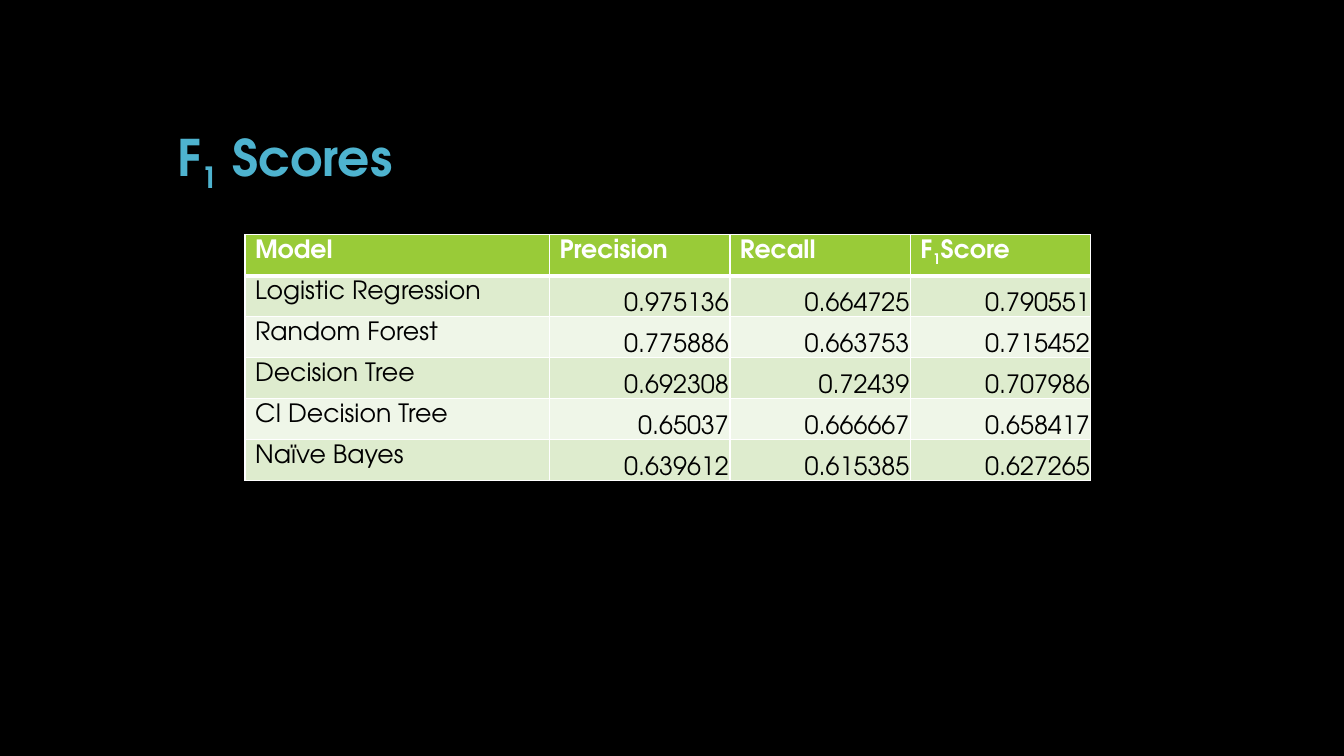
from lxml.etree import SubElement as Sub
from pptx import Presentation
from pptx.dml.color import RGBColor as RGB
from pptx.enum.text import MSO_ANCHOR as Anchor, PP_ALIGN as Align
from pptx.oxml.ns import qn
from pptx.util import Inches, Pt

HUES = {"back": "000000", "title": "4EB3CF", "head": "99CB38",
        "odd": "DEECCE", "even": "EFF6E8", "line": "FFFFFF", "text": "000000"}
FACE = "TeX Gyre Adventor"
ROWS = [
    ("Model", "Precision", "Recall", "F_1_Score"),
    ("Logistic Regression", "0.975136", "0.664725", "0.790551"),
    ("Random Forest", "0.775886", "0.663753", "0.715452"),
    ("Decision Tree", "0.692308", "0.72439", "0.707986"),
    ("CI Decision Tree", "0.65037", "0.666667", "0.658417"),
    ("Naïve Bayes", "0.639612", "0.615385", "0.627265"),
]
WIDTHS = [3.02, 1.79, 1.79, 1.79]
HIGH = 0.406


def write(para, text, size, hue, bold):
    """Fill a paragraph; text between underscores is subscript."""
    for i, part in enumerate(text.split("_")):
        run = para.add_run()
        run.text = part
        if i % 2:
            run.font._element.set("baseline", "-25000")
    font = para.font
    font.name, font.size, font.bold = FACE, Pt(size), bold
    font.color.rgb = RGB.from_string(HUES[hue])


def edge(cell, side, width):
    """Draw one border of a cell."""
    line = Sub(cell._tc.get_or_add_tcPr(), qn("a:ln" + side), w=str(Pt(width)))
    Sub(Sub(line, qn("a:solidFill")), qn("a:srgbClr"), val=HUES["line"])


# Slide
deck = Presentation()
deck.slide_width, deck.slide_height = Inches(13.33), Inches(7.5)
slide = deck.slides.add_slide(deck.slide_layouts[5])
slide.background.fill.solid()
slide.background.fill.fore_color.rgb = RGB.from_string(HUES["back"])

# Title
title = slide.shapes.title
title.left, title.top = Inches(1.66), Inches(0.42)
title.width, title.height = Inches(10), Inches(1.5)
title.text_frame.vertical_anchor = Anchor.BOTTOM
para = title.text_frame.paragraphs[0]
para.alignment, para.line_spacing = Align.LEFT, 0.9
write(para, "F_1_ Scores", 36, "title", True)

# Table grid
table = slide.shapes.add_table(
    len(ROWS), len(WIDTHS), Inches(2.43), Inches(2.33),
    Inches(sum(WIDTHS)), Inches(HIGH * len(ROWS))).table
for col, width in zip(table.columns, WIDTHS):
    col.width = Inches(width)

# Cells
for r, row in enumerate(ROWS):
    table.rows[r].height = Inches(HIGH)
    band = "head" if r == 0 else "odd" if r % 2 else "even"
    for c, text in enumerate(row):
        cell = table.cell(r, c)
        for side in "LRTB":
            thick = (r == 0 and side == "B") or (r == 1 and side == "T")
            edge(cell, side, 3 if thick else 1)
        cell.fill.solid()
        cell.fill.fore_color.rgb = RGB.from_string(HUES[band])
        para = cell.text_frame.paragraphs[0]
        write(para, text, 18, "text" if r else "line", r == 0)
        if r and c:
            para.alignment = Align.RIGHT
            cell.vertical_anchor = Anchor.BOTTOM
            cell.margin_left = cell.margin_right = cell.margin_top = Inches(0.01)
            cell.margin_bottom = 0

deck.save("out.pptx")
